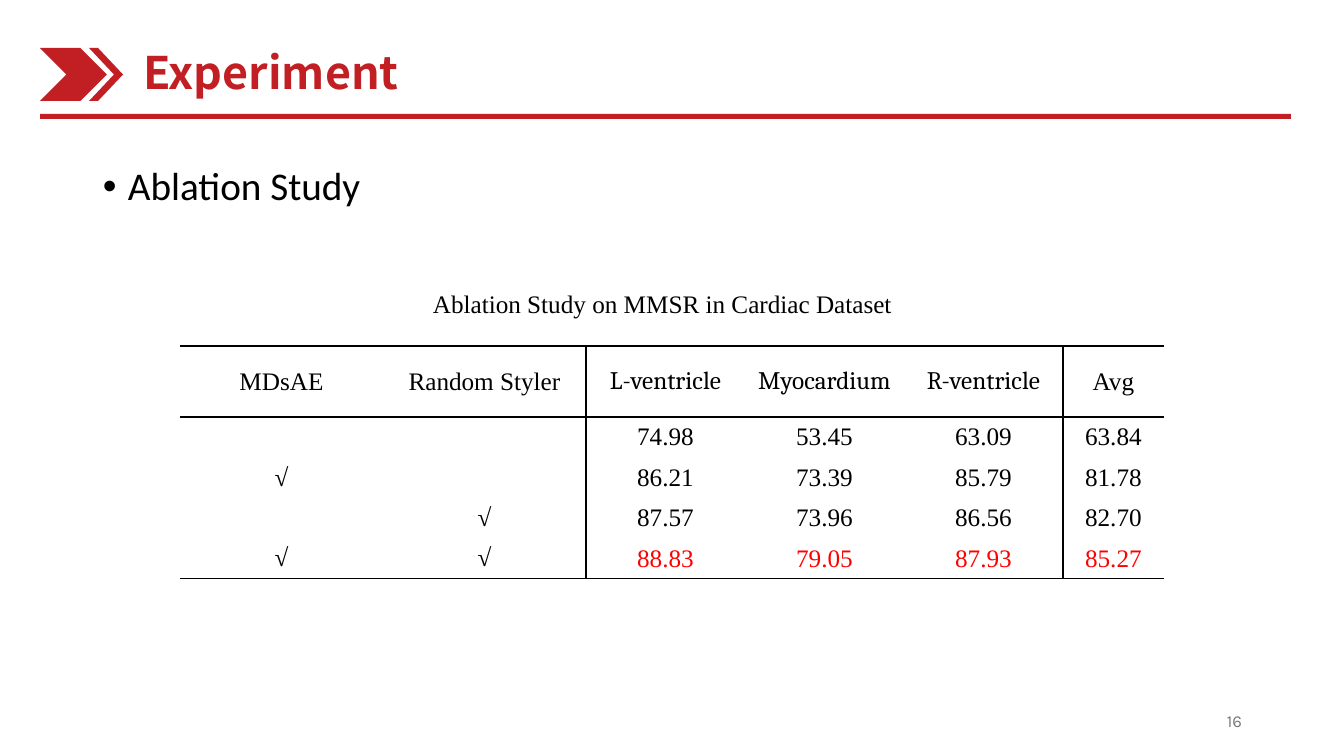
from lxml import etree
from pptx import Presentation
from pptx.dml.color import RGBColor
from pptx.enum.shapes import MSO_SHAPE
from pptx.enum.text import MSO_ANCHOR, MSO_AUTO_SIZE, PP_ALIGN
from pptx.oxml.ns import qn
from pptx.util import Pt

RECT, CHEVRON = MSO_SHAPE.RECTANGLE, MSO_SHAPE.CHEVRON
TOP, MIDDLE = MSO_ANCHOR.TOP, MSO_ANCHOR.MIDDLE
LEFT, CENTER, RIGHT = PP_ALIGN.LEFT, PP_ALIGN.CENTER, PP_ALIGN.RIGHT
NO_FIT = MSO_AUTO_SIZE.NONE

SCALE = 914400 / 100.8
RED, BLACK, GREY, BRIGHT = "C11F23", "000000", "797979", "FF0000"
SERIF = "Times New Roman"

HEAD = ["MDsAE", "Random Styler", "L-ventricle", "Myocardium", "R-ventricle", "Avg"]
ROWS = [
    HEAD,
    ["", "", "74.98", "53.45", "63.09", "63.84"],
    ["√", "", "86.21", "73.39", "85.79", "81.78"],
    ["", "√", "87.57", "73.96", "86.56", "82.70"],
    ["√", "√", "88.83", "79.05", "87.93", "85.27"],
]
WIDTHS = [203, 203, 159, 159, 159, 101]
HEIGHTS = [71, 40, 40, 40, 40]


def px(n):
    return round(n * SCALE)


def color(code):
    return RGBColor.from_string(code)


def apply(target, values):
    for name, value in values.items():
        setattr(target, name, value)


class Page:
    def __init__(self, deck, layout):
        self.slide = deck.slides.add_slide(layout)
        self.shapes = self.slide.shapes

    def label(self, frame, text, size, font, ink=BLACK, bold=False, align=LEFT):
        para = frame.paragraphs[0]
        para.alignment = align
        run = para.add_run()
        run.text = text
        apply(run.font, {"size": Pt(size), "name": font, "bold": bold})
        run.font.color.rgb = color(ink)
        return para

    def title(self, box, text, **style):
        shape = self.shapes.title
        apply(shape, dict(zip(("left", "top", "width", "height"), map(px, box))))
        apply(shape.text_frame, {"auto_size": NO_FIT, "vertical_anchor": MIDDLE,
                                 "margin_top": 0, "margin_bottom": 0})
        self.label(shape.text_frame, text, **style)

    def text(self, box, text, anchor=TOP, wrap=True, **style):
        frame = self.shapes.add_textbox(*map(px, box)).text_frame
        apply(frame, {"word_wrap": wrap, "vertical_anchor": anchor})
        return self.label(frame, text, **style)

    def bullet(self, box, text, **style):
        para = self.text(box, text, **style)
        apply(para, {"line_spacing": 0.9, "space_before": Pt(10)})
        props = para._p.get_or_add_pPr()
        props.set("marL", str(px(25)))
        props.set("indent", str(-px(25)))
        etree.SubElement(props, qn("a:buFont")).set("typeface", "Arial")
        etree.SubElement(props, qn("a:buChar")).set("char", "•")

    def shape(self, kind, box, fill, adjust=None, parent=None):
        item = (parent or self.shapes).add_shape(kind, *map(px, box))
        item.shadow.inherit = False
        item.fill.solid()
        item.fill.fore_color.rgb = color(fill)
        item.line.fill.background()
        if adjust is not None:
            item.adjustments[0] = adjust

    def border(self, cell, sides):
        props = cell._tc.get_or_add_tcPr()
        for side in "LRTB":
            line = etree.SubElement(props, qn(f"a:ln{side}"), w=str(Pt(1)))
            if side in sides:
                fill = etree.SubElement(line, qn("a:solidFill"))
                etree.SubElement(fill, qn("a:srgbClr")).set("val", BLACK)
            else:
                etree.SubElement(line, qn("a:noFill"))

    def table(self, left, top, rows, widths, heights):
        box = (left, top, sum(widths), sum(heights))
        grid = self.shapes.add_table(len(rows), len(widths), *map(px, box)).table
        apply(grid, {"first_row": False, "horz_banding": False})
        for col, width in zip(grid.columns, widths):
            col.width = px(width)
        last = len(rows) - 1
        for r, (row, height) in enumerate(zip(rows, heights)):
            grid.rows[r].height = px(height)
            for c, text in enumerate(row):
                cell = grid.cell(r, c)
                # Rules frame the header, the foot and the score columns
                sides = {"L": c in (2, 5), "R": c in (1, 4),
                         "T": r < 2, "B": r in (0, last)}
                self.border(cell, [s for s, on in sides.items() if on])
                cell.fill.background()
                cell.vertical_anchor = MIDDLE
                if r > 1 and c > 1:
                    apply(cell, {"margin_left": px(1), "margin_right": px(1),
                                 "margin_top": px(1), "margin_bottom": 0})
                if text:
                    font = "Cambria" if r == 0 and 2 <= c <= 4 else SERIF
                    ink = BRIGHT if r == last and c > 1 else BLACK
                    self.label(cell.text_frame, text, 18, font, ink, align=CENTER)


def main():
    deck = Presentation()
    apply(deck, {"slide_width": px(1344), "slide_height": px(756)})
    page = Page(deck, deck.slide_layouts[5])

    # Heading with rule and chevrons
    page.title((133, 39, 476, 65), "Experiment", size=32,
               font="Noto Sans CJK SC", ink=RED, bold=True)
    page.shape(RECT, (40, 114, 1251, 5), RED)
    mark = page.shapes.add_group_shape().shapes
    page.shape(CHEVRON, (40, 48, 67, 53), RED, parent=mark)
    page.shape(CHEVRON, (89, 48, 34, 53), RED, 0.735, mark)

    # Body and table
    page.bullet((93, 162, 1159, 519), "Ablation Study", size=28, font="Calibri")
    page.text((423, 283, 484, 40), "Ablation Study on MMSR in Cardiac Dataset",
              wrap=False, size=18, font=SERIF)
    page.table(180, 346, ROWS, WIDTHS, HEIGHTS)

    # Page number
    page.text((950, 701, 302, 40), "16", MIDDLE, size=12, font="Karla",
              ink=GREY, align=RIGHT)

    deck.save("out.pptx")


if __name__ == "__main__":
    main()
